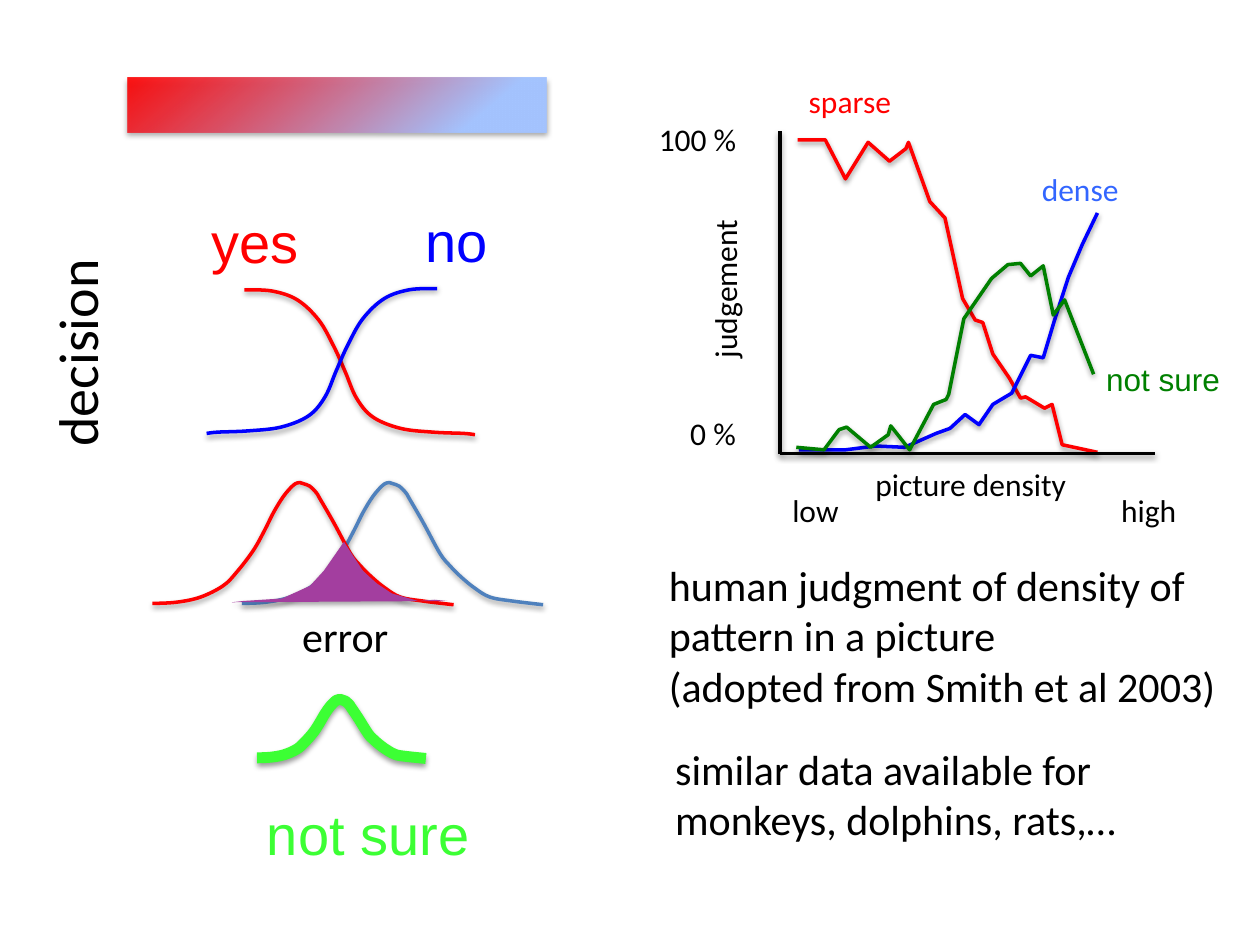
from lxml import etree
from pptx import Presentation
from pptx.dml.color import RGBColor
from pptx.enum.shapes import MSO_CONNECTOR, MSO_SHAPE
from pptx.enum.text import MSO_AUTO_SIZE
from pptx.oxml import parse_xml
from pptx.oxml.ns import nsdecls, qn
from pptx.util import Pt

PX = 9144  # 100 px to the inch
STRAIGHT = MSO_CONNECTOR.STRAIGHT
RECTANGLE = MSO_SHAPE.RECTANGLE

COLORS = {
    "black": "000000", "red": "FF0000", "blue": "0000FF", "steel": "4F81BD",
    "lime": "3CFF34", "green": "008000", "purple": "A33E9F",
    "sky": "A4C4FF", "azure": "3366FF",
}

# Outlines, measured from the top left of their own box
BELL = [
    (0, 96), (19, 95), (38, 91), (56, 82), (67, 71), (80, 54), (89, 38), (96, 24),
    (104, 11), (112, 2), (117, 0), (120, 1), (125, 3), (130, 8), (133, 13), (144, 32),
    (157, 56), (165, 66), (174, 75), (185, 84), (197, 91), (214, 94), (239, 97),
]
SIGMOID = [
    (0, 0), (22, 1), (42, 8), (59, 24), (71, 45), (80, 65),
    (89, 86), (102, 101), (124, 110), (150, 113), (174, 114), (183, 115),
]
FALLING = {"points": SIGMOID, "width": 183, "height": 115}
RISING = {**FALLING, "points": [(183 - x, y) for x, y in SIGMOID]}
BELL_SHAPE = {"points": BELL, "width": 239, "height": 97}

# outline, (left, top, width, height), color, line points
CURVES = [
    (BELL_SHAPE, (192, 383, 239, 97), "steel", 2),
    (BELL_SHAPE, (121, 383, 239, 97), "red", 2),
    (FALLING, (194, 230, 183, 115), "red", 2),
    (RISING, (164, 229, 183, 115), "blue", 2),
    (BELL_SHAPE, (204, 555, 134, 47), "lime", 6.25),
]
ERROR_REGION = [
    (193, 477), (224, 475), (246, 465), (257, 453), (264, 443), (273, 430), (288, 453),
    (299, 463), (311, 471), (332, 477), (345, 476), (355, 477), (184, 478),
]
DECISION_BAR = (101, 62, 333, 43)

JUDGEMENTS = {
    "red": [
        (633, 111), (655, 111), (671, 142), (689, 113), (706, 128), (719, 118),
        (721, 113), (738, 160), (750, 173), (764, 237), (774, 254), (780, 256),
        (788, 281), (801, 300), (810, 316), (814, 315), (829, 324), (835, 321),
        (843, 353), (871, 359),
    ],
    "blue": [
        (634, 357), (671, 357), (695, 354), (718, 355), (743, 344), (754, 340),
        (766, 329), (777, 337), (788, 321), (803, 312), (818, 282), (828, 284),
        (837, 254), (848, 220), (859, 194), (871, 169),
    ],
    "green": [
        (632, 355), (654, 357), (666, 341), (672, 339), (691, 355), (705, 345),
        (707, 338), (722, 357), (741, 321), (751, 317), (753, 313), (765, 253),
        (787, 221), (800, 210), (810, 209), (818, 219), (828, 211), (836, 250),
        (845, 238), (868, 297),
    ],
}
ORIGIN = (619, 360)
AXIS_ENDS = [(619, 104), (917, 360)]

# paragraphs, (left, top, width, height), size, font, color, rotation, wrap
LABELS = [
    (["decision"], (-32, 240, 185, 64), 32, "Calibri", "black", 270, True),
    (["yes"], (158, 160, 90, 43), 32, "Arial", "red", 0, False),
    (["no"], (328, 159, 70, 43), 32, "Arial", "blue", 0, False),
    (["not sure"], (202, 630, 182, 43), 32, "Arial", "lime", 0, False),
    (["error"], (230, 480, 90, 50), 24, "Calibri", "black", 0, False),
    (["picture density"], (685, 364, 173, 40), 18, "Calibri", "black", 0, False),
    (["low"], (619, 385, 57, 40), 18, "Calibri", "black", 0, False),
    (["high"], (880, 385, 64, 40), 18, "Calibri", "black", 0, False),
    (["judgement"], (509, 208, 132, 40), 18, "Calibri", "black", 270, False),
    (["0 %"], (538, 324, 57, 40), 18, "Calibri", "black", 0, False),
    (["100 %"], (513, 90, 82, 40), 18, "Calibri", "black", 0, False),
    (["sparse"], (632, 60, 87, 40), 18, "Calibri", "red", 0, False),
    (["dense"], (817, 130, 82, 40), 18, "Calibri", "azure", 0, False),
    (["not sure"], (868, 281, 111, 40), 18, "Arial", "green", 0, False),
    (["human judgment of density of pattern in a picture",
      "(adopted from Smith et al 2003)"],
     (521, 439, 459, 131), 24, "Calibri", "black", 0, True),
    (["similar data available for monkeys, dolphins, rats,…"],
     (526, 585, 435, 91), 24, "Calibri", "black", 0, True),
]


def rgb(color):
    return RGBColor.from_string(COLORS[color])


def emu(values):
    return [round(value * PX) for value in values]


def add_shadow(shape, distance=20000, opacity=38000):
    shape._element.spPr.append(parse_xml(
        f'<a:effectLst {nsdecls("a")}><a:outerShdw blurRad="40000" dist="{distance}" '
        f'dir="5400000" rotWithShape="0"><a:srgbClr val="000000">'
        f'<a:alpha val="{opacity}"/></a:srgbClr></a:outerShdw></a:effectLst>'))


def draw_line(shape, color, width):
    shape.line.color.rgb = rgb(color)
    shape.line.width = Pt(width)
    add_shadow(shape)


def add_outline(slide, points, close=False):
    start, *rest = [emu(point) for point in points]
    builder = slide.shapes.build_freeform(*start, scale=1.0)
    builder.add_line_segments(rest, close=close)
    shape = builder.convert_to_shape()
    if not close:
        shape.fill.background()
    return shape


def with_handles(points):
    """Follow each point by two Bezier handles, tangent to its neighbours."""
    padded = [points[0], *points, points[-1]]
    result = [points[0]]
    for before, start, end, after in zip(padded, padded[1:], padded[2:], padded[3:]):
        result += [
            tuple(s + (e - b) / 6 for b, s, e in zip(before, start, end)),
            tuple(e - (a - s) / 6 for s, e, a in zip(start, end, after)),
            end,
        ]
    return result


def add_curve(slide, outline, box, color, width):
    left, top, box_width, box_height = box
    points = [(left + x * box_width / outline["width"],
               top + y * box_height / outline["height"])
              for x, y in outline["points"]]
    curve = add_outline(slide, with_handles(points))
    segments = curve._element.xpath(".//a:path/a:lnTo")
    for i in range(0, len(segments), 3):
        bezier = etree.Element(qn("a:cubicBezTo"))
        segments[i].addprevious(bezier)
        for segment in segments[i:i + 3]:
            bezier.append(segment[0])
            segment.getparent().remove(segment)
    draw_line(curve, color, width)


def add_decision_bar(slide):
    bar = slide.shapes.add_shape(RECTANGLE, *emu(DECISION_BAR))
    bar.fill.gradient()
    bar.fill.gradient_angle = 309
    stops = bar.fill.gradient_stops
    for stop, color, position in zip(stops, ("red", "sky"), (0, 0.82)):
        stop.color.rgb = rgb(color)
        stop.position = position
    red = bar._element.xpath(".//a:gs/a:srgbClr")[0]
    etree.SubElement(red, qn("a:alpha"), val="91000")
    bar.line.fill.background()
    add_shadow(bar, 23000, 35000)


def add_label(slide, paragraphs, box, size, font, color, rotation, wrap):
    label = slide.shapes.add_textbox(*emu(box))
    label.rotation = rotation
    frame = label.text_frame
    frame.text = "\n".join(paragraphs)
    frame.word_wrap = wrap
    frame.auto_size = MSO_AUTO_SIZE.SHAPE_TO_FIT_TEXT
    for paragraph in frame.paragraphs:
        run_font = paragraph.runs[0].font
        for key, value in {"size": Pt(size), "name": font}.items():
            setattr(run_font, key, value)
        run_font.color.rgb = rgb(color)


def main():
    deck = Presentation()
    deck.slide_width, deck.slide_height = emu((1000, 750))
    slide = deck.slides.add_slide(deck.slide_layouts[6])

    for curve in CURVES:
        add_curve(slide, *curve)
    region = add_outline(slide, ERROR_REGION, close=True)
    region.fill.solid()
    region.fill.fore_color.rgb = rgb("purple")
    region.line.fill.background()
    add_shadow(region, 23000, 35000)
    add_decision_bar(slide)

    for color, points in JUDGEMENTS.items():
        draw_line(add_outline(slide, points), color, 2)
    for end in AXIS_ENDS:
        axis = slide.shapes.add_connector(STRAIGHT, *emu(ORIGIN + end))
        draw_line(axis, "black", 2)
    for label in LABELS:
        add_label(slide, *label)
    deck.save("out.pptx")


if __name__ == "__main__":
    main()
